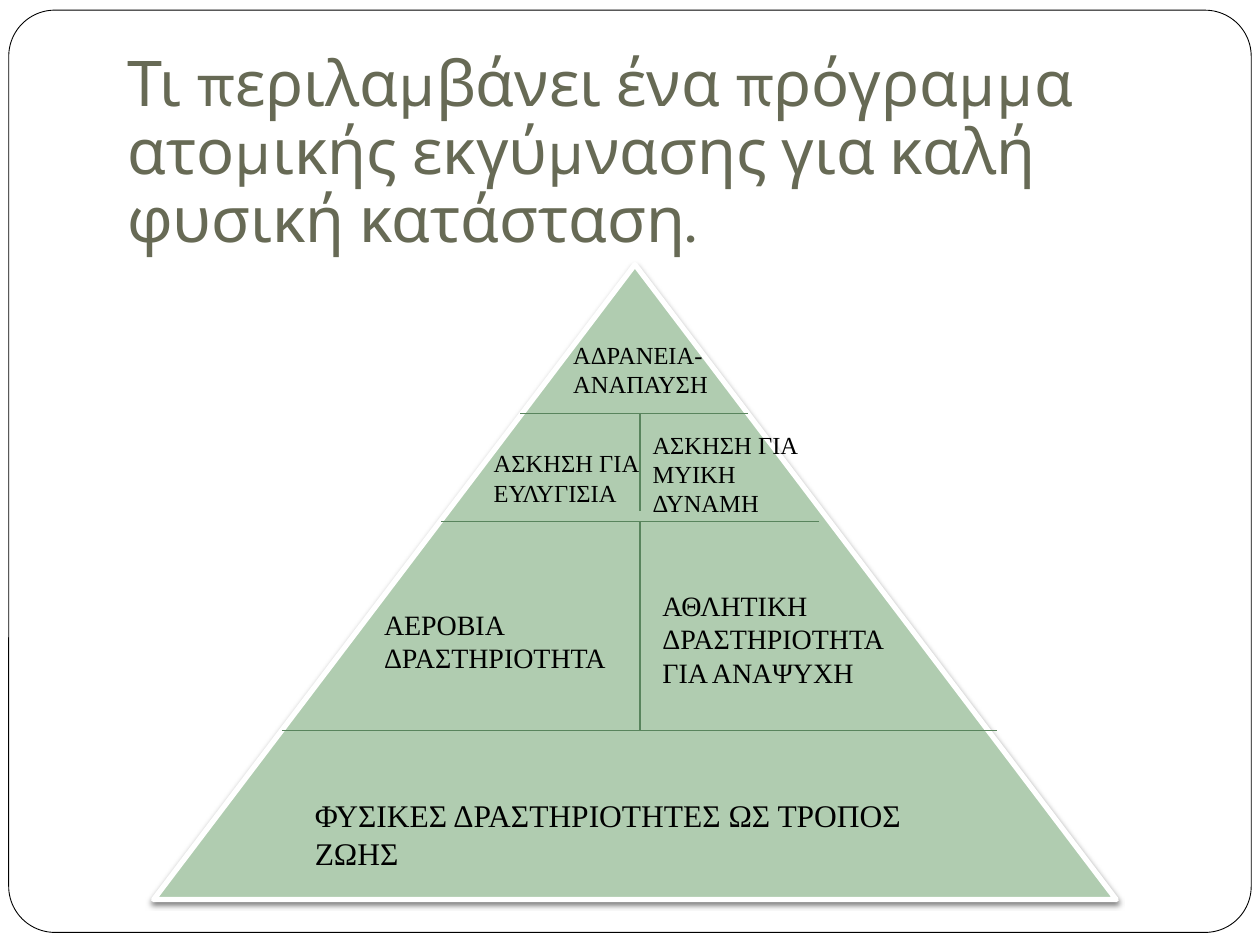
from dataclasses import dataclass

from lxml.etree import SubElement
from pptx import Presentation
from pptx.dml.color import RGBColor
from pptx.enum.shapes import MSO_CONNECTOR, MSO_SHAPE
from pptx.enum.text import MSO_ANCHOR as Anchor, MSO_AUTO_SIZE as AutoSize, PP_ALIGN as Align
from pptx.oxml.ns import qn
from pptx.util import Pt

TITLE = "Τι περιλαμβάνει ένα πρόγραμμα ατομικής εκγύμνασης για καλή φυσική κατάσταση."
TITLE_FRAME = {
    "word_wrap": True,
    "auto_size": AutoSize.NONE,
    "vertical_anchor": Anchor.BOTTOM,
    "margin_left": Pt(7.2),
    "margin_right": Pt(7.2),
    "margin_top": Pt(3.6),
    "margin_bottom": Pt(4),
}
LABEL_FRAME = {
    "word_wrap": True,
    "auto_size": AutoSize.SHAPE_TO_FIT_TEXT,
    "vertical_anchor": Anchor.TOP,
}

# Heights of the pyramid's horizontal dividers and the x of its centre line
TOP_ROW, MIDDLE_ROW, BASE_ROW = 236.2, 298.1, 417.6
CENTRE = 365.8


@dataclass
class Box:
    left: float
    top: float
    width: float
    height: float

    def lengths(self) -> tuple:
        return Pt(self.left), Pt(self.top), Pt(self.width), Pt(self.height)


@dataclass
class Label:
    text: str
    box: Box
    size: float


@dataclass
class Divider:
    x1: float
    y1: float
    x2: float
    y2: float


LABELS = [
    Label("ΑΔΡΑΝΕΙΑ-ΑΝΑΠΑΥΣΗ", Box(320.4, 190.8, 147.6, 41), 14),
    Label("ΑΣΚΗΣΗ ΓΙΑ ΕΥΛΥΓΙΣΙΑ", Box(275, 252.7, 130.3, 41), 14),
    Label("ΑΣΚΗΣΗ ΓΙΑ ΜΥΙΚΗ ΔΥΝΑΜΗ", Box(CENTRE, 241.9, 108, 58.3), 14),
    Label("ΑΕΡΟΒΙΑ ΔΡΑΣΤΗΡΙΟΤΗΤΑ", Box(212.4, 343.4, 158.4, 46.1), 16),
    Label("ΑΘΛΗΤΙΚΗ ΔΡΑΣΤΗΡΙΟΤΗΤΑ ΓΙΑ ΑΝΑΨΥΧΗ", Box(371.5, 332.6, 141.8, 65.5), 16),
    Label("ΦΥΣΙΚΕΣ ΔΡΑΣΤΗΡΙΟΤΗΤΕΣ ΩΣ ΤΡΟΠΟΣ ΖΩΗΣ", Box(172.8, 451.4, 380.9, 50.4), 18),
]
DIVIDERS = [
    Divider(297.4, TOP_ROW, 427.7, TOP_ROW),
    Divider(252, MIDDLE_ROW, 468, MIDDLE_ROW),
    Divider(161.3, BASE_ROW, 569.5, BASE_ROW),
    Divider(CENTRE, TOP_ROW, CENTRE, 292.3),
    Divider(CENTRE, MIDDLE_ROW, CENTRE, BASE_ROW),
]


def color(hex_value: str) -> RGBColor:
    return RGBColor.from_string(hex_value)


def apply_format(target, values: dict) -> None:
    for name, value in values.items():
        setattr(target, name, value)


def set_line(line, hex_value: str, width: float) -> None:
    line.color.rgb = color(hex_value)
    line.width = Pt(width)


def write_text(shape, text: str, frame: dict, font: str, size: float, hex_value: str):
    apply_format(shape.text_frame, frame)
    paragraph = shape.text_frame.paragraphs[0]
    paragraph.alignment = Align.LEFT
    run = paragraph.add_run()
    run.text = text
    apply_format(run.font, {"name": font, "size": Pt(size)})
    run.font.color.rgb = color(hex_value)
    return paragraph


def add_panel(slide, kind, box: Box, fill: str, line: str, width: float):
    """Add a filled, outlined shape without a shadow."""
    shape = slide.shapes.add_shape(kind, *box.lengths())
    shape.shadow.inherit = False
    shape.fill.solid()
    shape.fill.fore_color.rgb = color(fill)
    set_line(shape.line, line, width)
    return shape


def add_soft_shadow(shape) -> None:
    effects = shape.element.spPr.find(qn("a:effectLst"))
    shadow = SubElement(effects, qn("a:outerShdw"), blurRad=str(Pt(3)), dist=str(Pt(2)),
                        dir="5400000", algn="ctr", rotWithShape="0")
    tint = SubElement(shadow, qn("a:srgbClr"), val="000000")
    SubElement(tint, qn("a:alpha"), val="50000")


def add_divider(slide, divider: Divider) -> None:
    connector = slide.shapes.add_connector(
        MSO_CONNECTOR.STRAIGHT,
        Pt(divider.x1), Pt(divider.y1), Pt(divider.x2), Pt(divider.y2))
    set_line(connector.line, "59845D", 0.75)
    SubElement(connector.element.spPr, qn("a:effectLst"))


def add_label(slide, label: Label) -> None:
    shape = slide.shapes.add_textbox(*label.box.lengths())
    write_text(shape, label.text, LABEL_FRAME, "Times New Roman", label.size, "000000")


def add_title(slide) -> None:
    title = slide.shapes.title
    left, top, width, height = Box(65.5, 60.5, 612, 90).lengths()
    apply_format(title, {"left": left, "top": top, "width": width, "height": height})
    paragraph = write_text(title, TITLE, TITLE_FRAME, "Karla", 36, "676A55")
    paragraph.line_spacing = 0.9


def main() -> None:
    presentation = Presentation()
    presentation.slide_width, presentation.slide_height = Pt(720), Pt(540)
    slide = presentation.slides.add_slide(presentation.slide_layouts[5])

    frame = add_panel(slide, MSO_SHAPE.ROUNDED_RECTANGLE,
                      Box(5, 5.8, 710, 527), "FFFFFF", "000000", 0.5)
    frame.adjustments[0] = 0.05
    slide.shapes.title.element.addprevious(frame.element)
    add_title(slide)

    pyramid = add_panel(slide, MSO_SHAPE.ISOSCELES_TRIANGLE,
                        Box(87.8, 151.2, 550.1, 362.9), "B0CCB0", "FFFFFF", 3)
    add_soft_shadow(pyramid)
    for divider in DIVIDERS:
        add_divider(slide, divider)
    for label in LABELS:
        add_label(slide, label)

    presentation.save("out.pptx")


if __name__ == "__main__":
    main()
